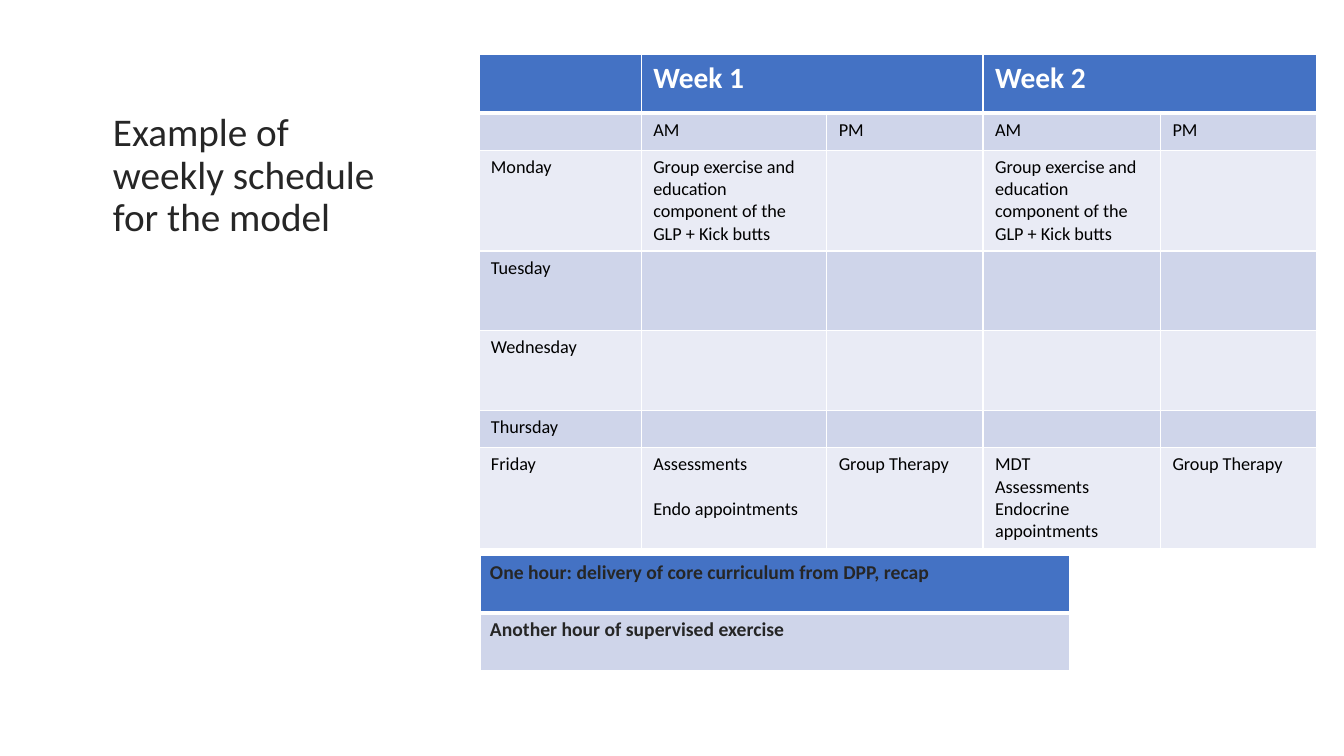
from lxml import etree
from pptx import Presentation
from pptx.dml.color import RGBColor
from pptx.enum import text
from pptx.oxml import ns
from pptx.util import Pt

PX = 9144  # 100 px to the inch
FONT = "Calibri"
WHITE = RGBColor(0xFF, 0xFF, 0xFF)
BLACK = RGBColor(0, 0, 0)
INK = RGBColor(0x26, 0x26, 0x26)
BLUE = RGBColor(0x44, 0x72, 0xC4)
BAND_DARK = RGBColor(0xCF, 0xD5, 0xEA)
BAND_LIGHT = RGBColor(0xE9, 0xEB, 0xF5)

COLUMNS = [161, 184, 155, 176, 155]
ROWS = [58, 37, 99, 79, 79, 37, 99]
GROUP = "Group exercise and education component of the GLP + Kick butts"
SCHEDULE = [
    ["", "Week 1", "", "Week 2", ""],
    ["", "AM", "PM", "AM", "PM"],
    ["Monday", GROUP, "", GROUP, ""],
    ["Tuesday", "", "", "", ""],
    ["Wednesday", "", "", "", ""],
    ["Thursday", "", "", "", ""],
    ["Friday", "Assessments\nEndo appointments", "Group Therapy",
     "MDT\nAssessments\nEndocrine appointments", "Group Therapy"],
]
SESSIONS = [
    ["One hour: delivery of core curriculum from DPP, recap"],
    ["Another hour of supervised exercise"],
]


def write(frame, words, size, color, bold=False, gap=0, line_spacing=None):
    """Write one paragraph per line of words, with gap points between them."""
    for index, line in enumerate(words.split("\n")):
        para = frame.paragraphs[0] if index == 0 else frame.add_paragraph()
        para.alignment = text.PP_ALIGN.LEFT
        para.line_spacing = line_spacing
        if index and gap:
            para.space_before = Pt(gap)
        if line:
            span = para.add_run()
            span.text = line
            span.font.name = FONT
            span.font.size = Pt(size)
            span.font.bold = bold
            span.font.color.rgb = color
        else:  # keeps an empty cell from growing its row
            etree.SubElement(para._p, ns.qn("a:endParaRPr"), sz=str(size * 100))


def add_borders(cell, top, bottom):
    """Give the cell white borders; must run before its fill is set."""
    properties = cell._tc.get_or_add_tcPr()
    for side, width in (("L", 1), ("R", 1), ("T", top), ("B", bottom)):
        line = etree.SubElement(properties, ns.qn(f"a:ln{side}"), w=str(Pt(width)))
        fill = etree.SubElement(line, ns.qn("a:solidFill"))
        etree.SubElement(fill, ns.qn("a:srgbClr"), val=str(WHITE))


def add_grid(page, left, top, columns, rows):
    """Add a banded table with a blue first row and a thick rule below it."""
    box = [left, top, sum(columns), sum(rows)]
    table = page.shapes.add_table(
        len(rows), len(columns), *(length * PX for length in box)).table
    table.horz_banding = False
    for column, width in zip(table.columns, columns):
        column.width = width * PX
    for index, (row, height) in enumerate(zip(table.rows, rows)):
        row.height = height * PX
        for cell in row.cells:
            add_borders(cell, 3 if index == 1 else 1, 3 if index == 0 else 1)
            cell.fill.solid()
            cell.fill.fore_color.rgb = (
                BLUE if index == 0 else BAND_DARK if index % 2 else BAND_LIGHT)
    return table


def add_title(page, left, top, width, height):
    title = page.shapes.title
    title.left, title.top = left * PX, top * PX
    title.width, title.height = width * PX, height * PX
    frame = title.text_frame
    frame.word_wrap = True
    frame.auto_size = text.MSO_AUTO_SIZE.NONE
    frame.vertical_anchor = text.MSO_ANCHOR.BOTTOM
    write(frame, "Example of weekly schedule for the model", 28, INK, line_spacing=0.9)


def add_schedule(page, left, top):
    table = add_grid(page, left, top, COLUMNS, ROWS)
    for first in (1, 3):
        table.cell(0, first).merge(table.cell(0, first + 1))
    for row, entries in enumerate(SCHEDULE):
        for column, words in enumerate(entries):
            cell = table.cell(row, column)
            cell.margin_left = cell.margin_right = 12 * PX
            cell.margin_top = cell.margin_bottom = 6 * PX
            if row == 0:
                write(cell.text_frame, words, 21, WHITE, bold=True)
            else:
                gap = 16 if words.startswith("Assessments") else 0
                write(cell.text_frame, words, 13, BLACK, gap=gap)


def add_sessions(page, left, top):
    table = add_grid(page, left, top, [585], [57, 57])
    for row, (words,) in enumerate(SESSIONS):
        write(table.cell(row, 0).text_frame, words, 14, INK, bold=True)


def main():
    deck = Presentation()
    deck.slide_width, deck.slide_height = 1333 * PX, 750 * PX
    page = deck.slides.add_slide(deck.slide_layouts[5])
    add_title(page, 102, 106, 310, 137)
    add_schedule(page, 475, 54)
    add_sessions(page, 476, 551)
    deck.save("out.pptx")


if __name__ == "__main__":
    main()
